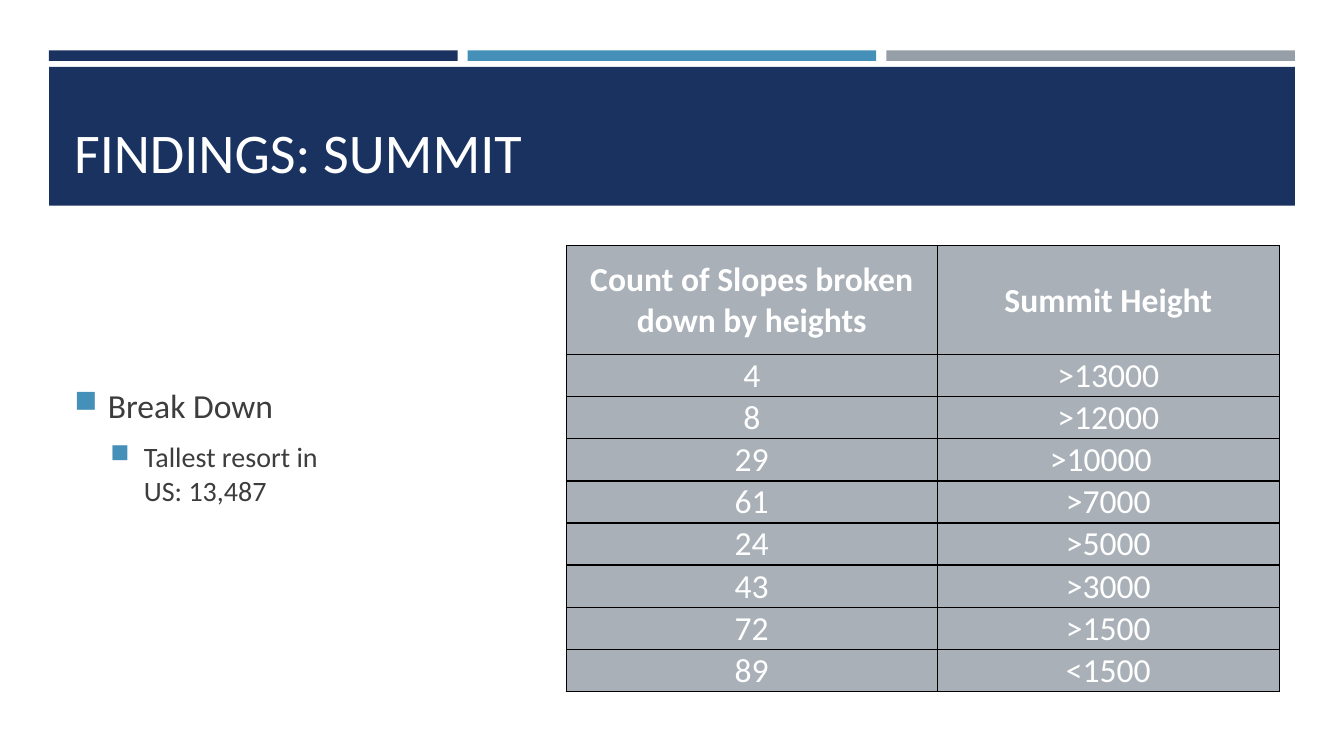
import pptx
import pptx.dml.color
import pptx.enum.shapes
import pptx.enum.text
import pptx.oxml
import pptx.oxml.ns
import pptx.util
from lxml import etree

Pt = pptx.util.Pt
ANCHOR = pptx.enum.text.MSO_ANCHOR
FONT = "Calibri"
COLORS = {
    "navy": "1A3260", "blue": "4590B8", "gray": "969FA7", "cell": "A9B0B7",
    "white": "FFFFFF", "text": "3D3D3D", "border": "000000",
}
SUMMITS = [
    ("Count of Slopes broken down by heights", "Summit Height"),
    ("4", ">13000"), ("8", ">12000"), ("29", ">10000"), ("61", ">7000"),
    ("24", ">5000"), ("43", ">3000"), ("72", ">1500"), ("89", "<1500"),
]
SHIFTED = ">10000"  # this value sits a little left of centre


def color(name):
    return pptx.dml.color.RGBColor.from_string(COLORS[name])


def add_bar(page, left, top, width, height, fill):
    bar = page.shapes.add_shape(pptx.enum.shapes.MSO_SHAPE.RECTANGLE,
                                Pt(left), Pt(top), Pt(width), Pt(height))
    bar.shadow.inherit = False
    bar.fill.solid()
    bar.fill.fore_color.rgb = color(fill)
    bar.line.fill.background()


def add_span(para, text, size, name, bold=False):
    span = para.add_run()
    span.text = text
    span.font.size = Pt(size)
    span.font.name = FONT
    span.font.bold = bold
    span.font.color.rgb = color(name)


def add_text_frame(page, left, top, width, height, anchor):
    box = page.shapes.add_textbox(Pt(left), Pt(top), Pt(width), Pt(height))
    box.text_frame.word_wrap = True
    box.text_frame.vertical_anchor = anchor
    return box.text_frame


def set_bullet(para, indent, hanging):
    props = para._p.get_or_add_pPr()
    props.set("marL", str(Pt(indent)))
    props.set("indent", str(-Pt(hanging)))
    bullet_color = etree.SubElement(props, pptx.oxml.ns.qn("a:buClr"))
    etree.SubElement(bullet_color, pptx.oxml.ns.qn("a:srgbClr"), val=COLORS["blue"])
    etree.SubElement(props, pptx.oxml.ns.qn("a:buSzPct"), val="92000")
    etree.SubElement(props, pptx.oxml.ns.qn("a:buChar"), char="■")


def set_borders(cell):
    props = cell._tc.get_or_add_tcPr()
    for position, side in enumerate(("lnL", "lnR", "lnT", "lnB")):
        line = pptx.oxml.parse_xml(
            f'<a:{side} {pptx.oxml.ns.nsdecls("a")} w="{Pt(1)}"><a:solidFill>'
            f'<a:srgbClr val="{COLORS["border"]}"/></a:solidFill></a:{side}>')
        props.insert(position, line)


def add_header(page, left, top, width, height):
    # Three accent bars
    gap = 7.2
    bar_width = (width - 2 * gap) / 3
    for index, fill in enumerate(("navy", "blue", "gray")):
        add_bar(page, left + index * (bar_width + gap), top, bar_width, 7.5, fill)
    # Title band
    band_top = top + 11.8
    add_bar(page, left, band_top, width, height - 11.8, "navy")
    frame = add_text_frame(page, left + 10.8, band_top + 10, width - 21.6, 77.8,
                           ANCHOR.BOTTOM)
    add_span(frame.paragraphs[0], "FINDINGS: SUMMIT", 40, "white")


def add_break_down(page, left, top, width, height):
    frame = add_text_frame(page, left, top, width, height, ANCHOR.MIDDLE)
    points = [("Break Down", 24, 24), ("Tallest resort in US: 13,487", 20, 49.7)]
    for index, (text, size, indent) in enumerate(points):
        para = frame.add_paragraph() if index else frame.paragraphs[0]
        para.level = index
        para.space_before = Pt(size * 0.2)
        para.space_after = Pt(6)
        set_bullet(para, indent, 24)
        add_span(para, text, size, "text")


def add_summit_table(page, left, top, width, height):
    header_height = 77.9
    row_height = (height - header_height) / (len(SUMMITS) - 1)
    table = page.shapes.add_table(len(SUMMITS), 2, Pt(left), Pt(top),
                                  Pt(width), Pt(height)).table
    table.columns[0].width = Pt(width * 0.52)
    table.columns[1].width = Pt(width * 0.48)
    for row, values in enumerate(SUMMITS):
        is_header = row == 0
        table.rows[row].height = Pt(row_height if row else header_height)
        for column, value in enumerate(values):
            cell = table.cell(row, column)
            cell.fill.solid()
            cell.fill.fore_color.rgb = color("cell")
            set_borders(cell)
            cell.margin_left = cell.margin_top = Pt(0.6)
            cell.margin_right = Pt(11.4 if value == SHIFTED else 0.6)
            cell.margin_bottom = Pt(0)
            cell.vertical_anchor = ANCHOR.MIDDLE if is_header else ANCHOR.BOTTOM
            para = cell.text_frame.paragraphs[0]
            para.alignment = pptx.enum.text.PP_ALIGN.CENTER
            add_span(para, value, 24, "white", is_header)


def main():
    deck = pptx.Presentation()
    deck.slide_width, deck.slide_height = Pt(960), Pt(540)
    page = deck.slides.add_slide(deck.slide_layouts[6])
    add_header(page, 35, 36, 890, 111)
    add_break_down(page, 46, 175.5, 198, 286)
    add_summit_table(page, 404.5, 175.5, 509.5, 318.5)
    deck.save("out.pptx")


if __name__ == "__main__":
    main()
